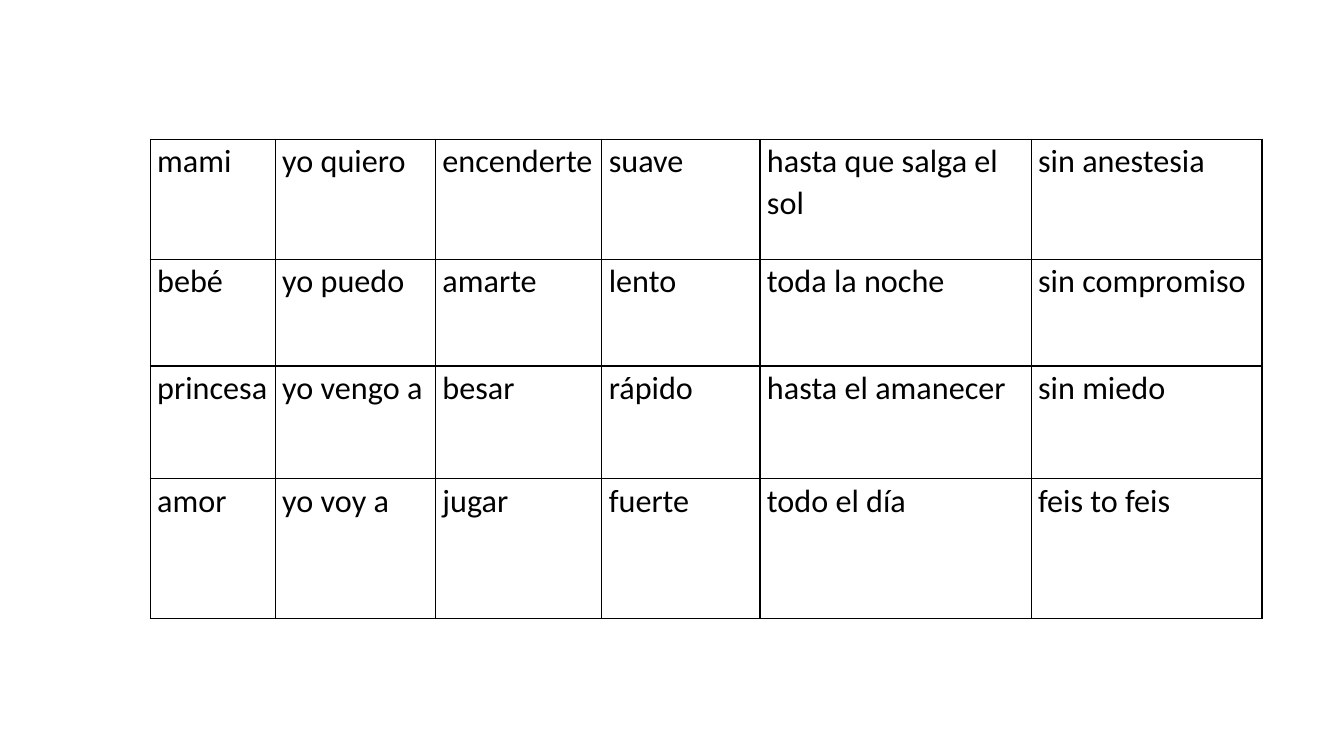
from typing import NamedTuple

from lxml import etree
from pptx import Presentation
from pptx.dml.color import RGBColor
from pptx.oxml import ns
from pptx.util import Pt

BLACK = RGBColor(0x00, 0x00, 0x00)
FONT = "Calibri"
FONT_SIZE = 23
SIDE_MARGIN = 5
BORDER_WIDTH = 1
TABLE_LEFT, TABLE_TOP = 107.3, 99.4
COLUMN_WIDTHS = (89.3, 114.5, 118.8, 113, 193.7, 164.9)


class Verse(NamedTuple):
    height: float
    phrases: tuple[str, ...]


VERSES = (
    Verse(85.7, ("mami", "yo quiero", "encenderte", "suave",
                 "hasta que salga el sol", "sin anestesia")),
    Verse(76.3, ("bebé", "yo puedo", "amarte", "lento",
                 "toda la noche", "sin compromiso")),
    Verse(80.6, ("princesa", "yo vengo a", "besar", "rápido",
                 "hasta el amanecer", "sin miedo")),
    Verse(100.1, ("amor", "yo voy a", "jugar", "fuerte",
                  "todo el día", "feis to feis")),
)


def add_borders(cell) -> None:
    properties = cell._tc.get_or_add_tcPr()
    for position, side in enumerate(("lnL", "lnR", "lnT", "lnB")):
        line = etree.Element(ns.qn(f"a:{side}"), w=str(Pt(BORDER_WIDTH)))
        fill = etree.SubElement(line, ns.qn("a:solidFill"))
        etree.SubElement(fill, ns.qn("a:srgbClr"), val=str(BLACK))
        properties.insert(position, line)


def write_cell(cell, phrase: str) -> None:
    cell.margin_left = cell.margin_right = Pt(SIDE_MARGIN)
    cell.margin_top = cell.margin_bottom = Pt(0)
    cell.fill.background()
    add_borders(cell)
    para = cell.text_frame.paragraphs[0]
    para.line_spacing = 1.07
    span = para.add_run()
    span.text = phrase
    span.font.name = FONT
    span.font.size = Pt(FONT_SIZE)
    span.font.bold = False
    span.font.color.rgb = BLACK


def add_verse_table(page) -> None:
    frame = page.shapes.add_table(
        len(VERSES), len(COLUMN_WIDTHS), Pt(TABLE_LEFT), Pt(TABLE_TOP),
        Pt(sum(COLUMN_WIDTHS)), Pt(sum(verse.height for verse in VERSES)))
    table = frame.table
    table.first_row = table.horz_banding = False
    for column, width in zip(table.columns, COLUMN_WIDTHS):
        column.width = Pt(width)
    for row, verse in zip(table.rows, VERSES):
        row.height = Pt(verse.height)
        for cell, phrase in zip(row.cells, verse.phrases):
            write_cell(cell, phrase)


def main() -> None:
    deck = Presentation()
    deck.slide_width, deck.slide_height = Pt(960), Pt(540)
    page = deck.slides.add_slide(deck.slide_layouts[6])
    add_verse_table(page)
    deck.save("out.pptx")


if __name__ == "__main__":
    main()
